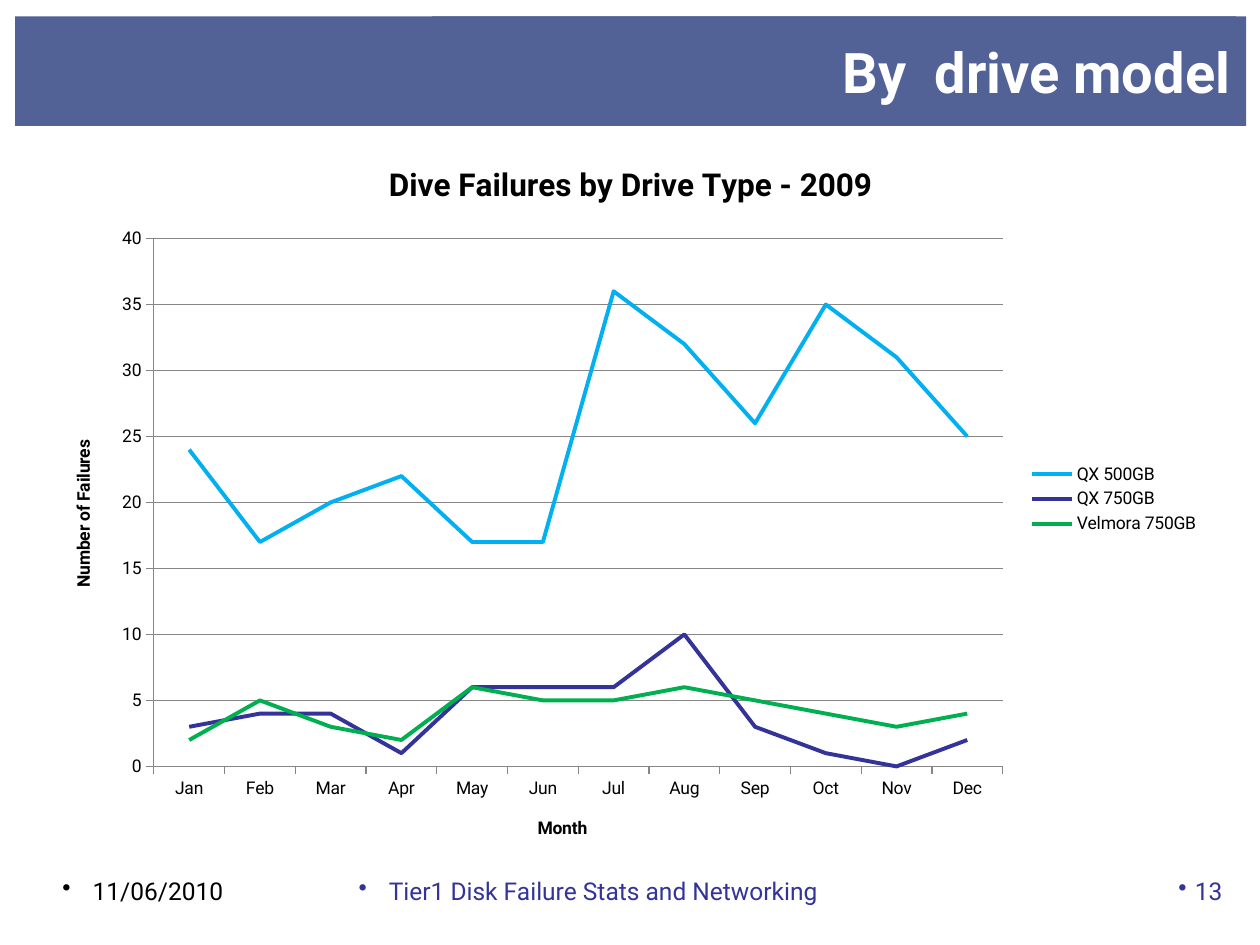
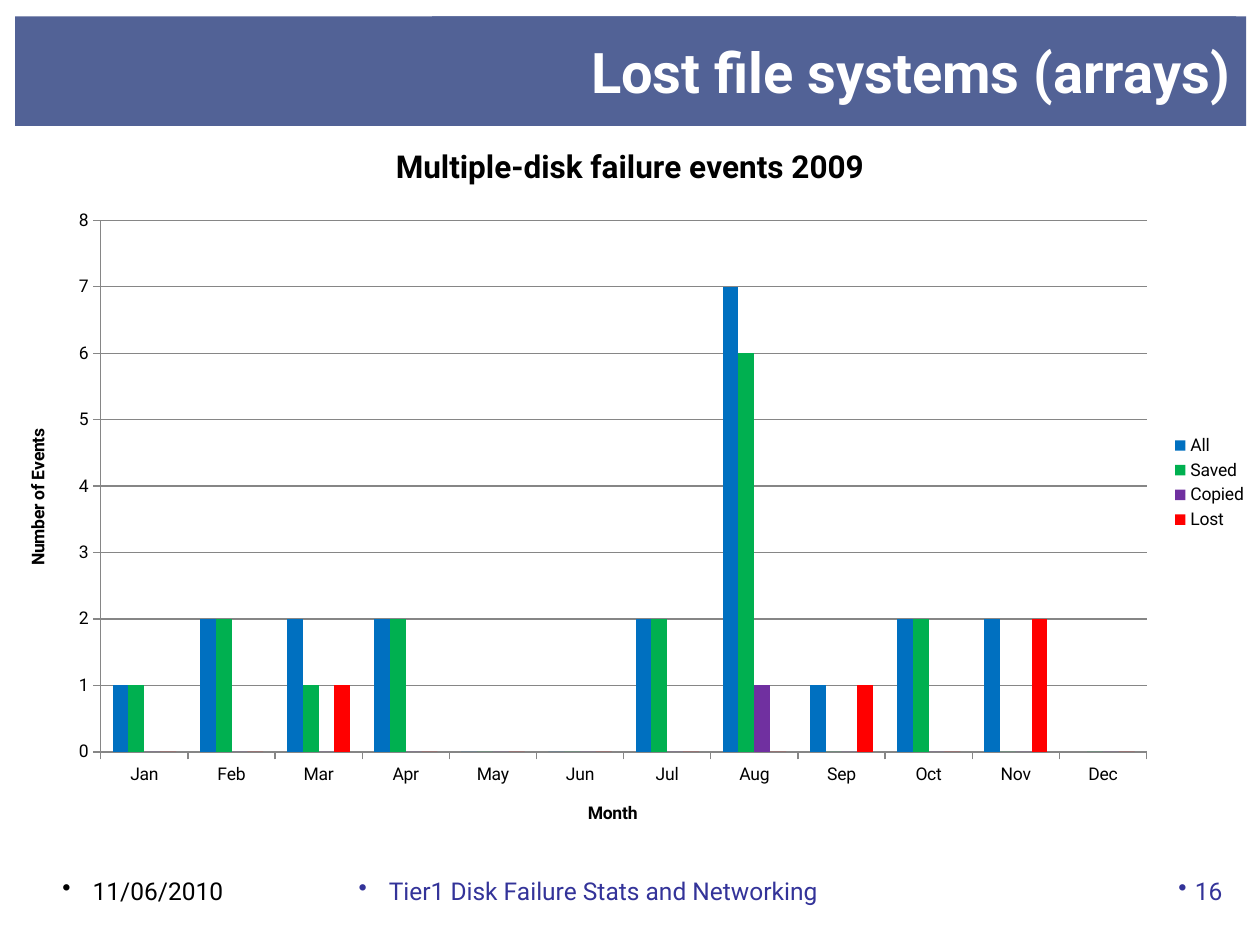
from lxml.etree import SubElement
from pptx import Presentation
from pptx.chart.data import CategoryChartData as Data
from pptx.dml.color import RGBColor
from pptx.enum.chart import XL_CHART_TYPE as Kind, XL_LEGEND_POSITION as Spot, XL_TICK_MARK as Tick
from pptx.enum.shapes import MSO_SHAPE as Shape
from pptx.enum.text import MSO_ANCHOR as Anchor, PP_ALIGN as Align
from pptx.oxml import parse_xml
from pptx.oxml.ns import nsdecls, qn
from pptx.util import Inches, Pt

FONT = "Roboto"
BAND = RGBColor(0x52, 0x62, 0x96)
WHITE = RGBColor(0xFF, 0xFF, 0xFF)
BLACK = RGBColor(0x00, 0x00, 0x00)
NAVY = RGBColor(0x33, 0x33, 0x99)
GRAY = RGBColor(0x86, 0x86, 0x86)
SKY = RGBColor(0x00, 0xB0, 0xF0)
BLUE = RGBColor(0x00, 0x70, 0xC0)
GREEN = RGBColor(0x00, 0xB0, 0x50)
PURPLE = RGBColor(0x70, 0x30, 0xA0)
RED = RGBColor(0xFF, 0x00, 0x00)
MONTHS = "Jan Feb Mar Apr May Jun Jul Aug Sep Oct Nov Dec".split()


class Deck:
    def __init__(self):
        self.prs = Presentation()
        self.prs.slide_width = Inches(10)
        self.prs.slide_height = Inches(7.5)

    def page(self, title, number):
        self.slide = self.prs.slides.add_slide(self.prs.slide_layouts[6])
        self.band(0.12, 9.69)
        frame = self.band(3.43, 6.46).text_frame
        frame.word_wrap = True
        frame.vertical_anchor = Anchor.MIDDLE
        frame.margin_right = Inches(0.12)
        para = frame.paragraphs[0]
        para.text = title
        para.alignment = Align.RIGHT
        self.style(para.font, 32, WHITE, True)
        self.foot("11/06/2010", 0.2, 2.05, BLACK)
        self.foot("Tier1 Disk Failure Stats and Networking", 2.24, 5.04, NAVY)
        self.foot(number, 9.25, 0.55, NAVY, Align.RIGHT, 0.13, 0, 0.1)

    def style(self, font, size, color, bold=False):
        font.name = FONT
        font.size = Pt(size)
        font.bold = bold
        font.color.rgb = color

    def band(self, left, width):
        box = self.slide.shapes.add_shape(
            Shape.RECTANGLE, Inches(left), Inches(0.13), Inches(width), Inches(0.87))
        box.shadow.inherit = False
        box.fill.solid()
        box.fill.fore_color.rgb = BAND
        box.line.fill.background()
        return box

    def foot(self, text, left, width, color, align=Align.CENTER, hang=0.24, start=0.1, end=0.28):
        box = self.slide.shapes.add_textbox(
            Inches(left), Inches(6.9), Inches(width), Inches(0.39))
        frame = box.text_frame
        frame.word_wrap = True
        frame.margin_left = Inches(start)
        frame.margin_right = Inches(end)
        para = frame.paragraphs[0]
        para.text = text
        para.alignment = align
        props = para._p.get_or_add_pPr()
        props.set("marL", str(Inches(hang)))
        props.set("indent", str(-Inches(hang)))
        SubElement(props, qn("a:buChar"), char="•")
        self.style(para.font, 14, color)

    def label(self, frame, text, size):
        frame.text = text
        self.style(frame.paragraphs[0].font, size, BLACK, True)

    def plot(self, chart, area):
        root = chart._chartSpace.chart.plotArea
        for old in root.findall(qn("c:layout")):
            root.remove(old)
        sizes = "".join(f'<c:{key} val="{val}"/>' for key, val in zip("xywh", area))
        root.insert(0, parse_xml(
            f'<c:layout {nsdecls("c")}><c:manualLayout><c:layoutTarget val="inner"/>'
            f'<c:xMode val="edge"/><c:yMode val="edge"/>{sizes}</c:manualLayout></c:layout>'))

    def axis(self, axis, title):
        axis.major_tick_mark = Tick.OUTSIDE
        axis.minor_tick_mark = Tick.NONE
        axis.format.line.color.rgb = GRAY
        self.label(axis.axis_title.text_frame, title, 10)

    def chart(self, kind, place, area, title, unit, top, step, rows):
        data = Data()
        data.categories = MONTHS
        for name, _, vals in rows:
            data.add_series(name, vals)
        chart = self.slide.shapes.add_chart(kind, *map(Inches, place), data).chart
        self.style(chart.font, 10, BLACK)
        chart.has_title = True
        self.label(chart.chart_title.text_frame, title, 18)
        chart.has_legend = True
        chart.legend.position = Spot.RIGHT
        chart.legend.include_in_layout = False
        self.axis(chart.category_axis, "Month")
        scale = chart.value_axis
        self.axis(scale, unit)
        scale.minimum_scale = 0
        scale.maximum_scale = top
        scale.major_unit = step
        scale.has_major_gridlines = True
        scale.major_gridlines.format.line.color.rgb = GRAY
        self.plot(chart, area)
        chart.plots[0].vary_by_categories = False
        for line, (_, color, _) in zip(chart.plots[0].series, rows):
            if kind == Kind.LINE:
                line.smooth = False
                line.format.line.color.rgb = color
                line.format.line.width = Pt(2.25)
            else:
                line.format.fill.solid()
                line.format.fill.fore_color.rgb = color
        return chart


def main():
    deck = Deck()
    deck.page("By  drive model", "13")
    deck.chart(
        Kind.LINE, (0.39, 1.09, 9.23, 5.74), (0.09, 0.14, 0.73, 0.73),
        "Dive Failures by Drive Type - 2009", "Number of Failures", 40, 5,
        [("QX 500GB", SKY, (24, 17, 20, 22, 17, 17, 36, 32, 26, 35, 31, 25)),
         ("QX 750GB", NAVY, (3, 4, 4, 1, 6, 6, 6, 10, 3, 1, 0, 2)),
         ("Velmora 750GB", GREEN, (2, 5, 3, 2, 6, 5, 5, 6, 5, 4, 3, 4))])

    deck.page("Lost file systems (arrays)", "16")
    events = deck.chart(
        Kind.COLUMN_CLUSTERED, (0, 0.94, 10, 5.78), (0.08, 0.14, 0.83, 0.73),
        "Multiple-disk failure events 2009", "Number of Events", 8, 1,
        [("All", BLUE, (1, 2, 2, 2, 0, 0, 2, 7, 1, 2, 2, None)),
         ("Saved", GREEN, (1, 2, 1, 2, 0, 0, 2, 6, 0, 2, 0, 0)),
         ("Copied", PURPLE, (0, 0, 0, 0, 0, 0, 0, 1, 0, 0, 0, 0)),
         ("Lost", RED, (0, 0, 1, 0, 0, 0, 0, 0, 1, 0, 2, 0))])
    events.plots[0].gap_width = 150
    events.plots[0].overlap = 0
    deck.prs.save("out.pptx")


if __name__ == "__main__":
    main()
